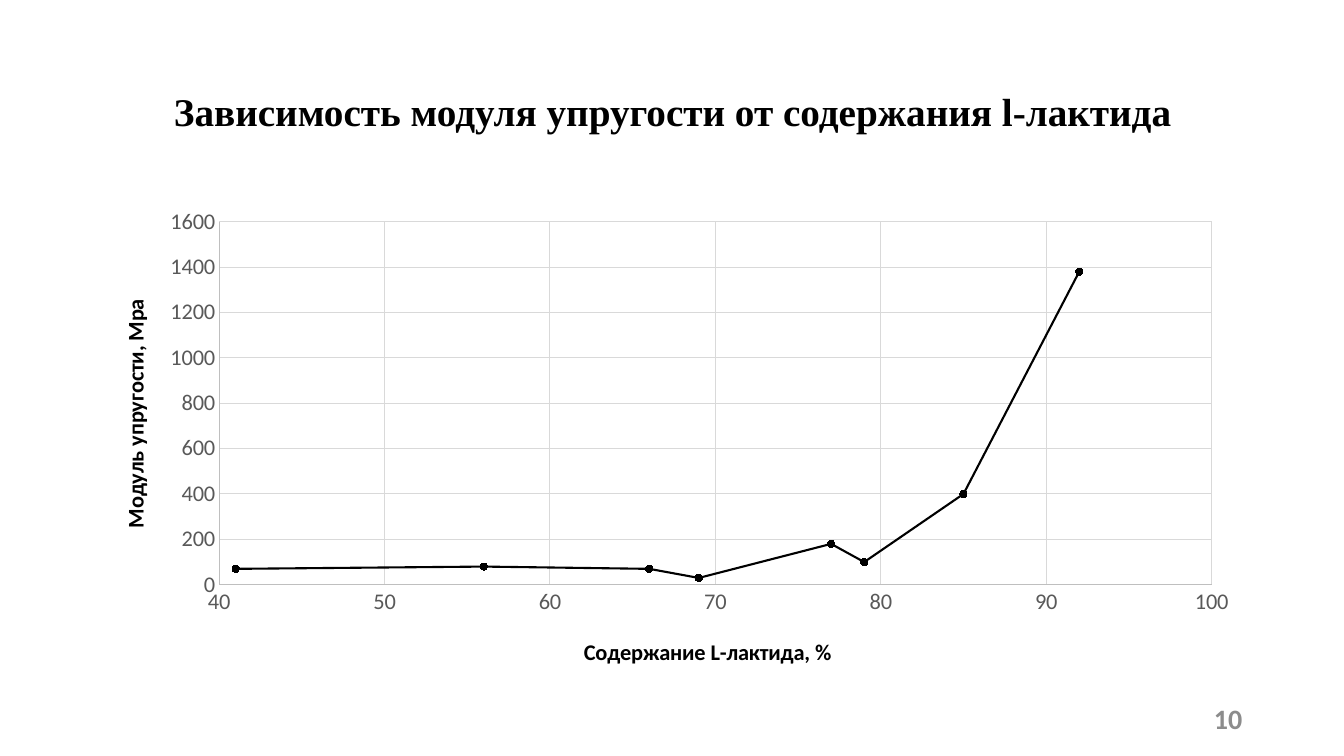
from pptx import Presentation
from pptx.chart.data import XyChartData
from pptx.dml.color import RGBColor
from pptx.enum.chart import XL_CHART_TYPE, XL_MARKER_STYLE, XL_TICK_LABEL_POSITION, XL_TICK_MARK
from pptx.enum.text import MSO_ANCHOR, PP_ALIGN
from pptx.oxml import parse_xml
from pptx.oxml.ns import nsdecls, qn
from pptx.util import Inches, Pt

BLACK, TICK_GRAY, AXIS_GRAY, GRID_GRAY = "000000", "595959", "BFBFBF", "D9D9D9"
MEASUREMENTS = [(92, 1380), (85, 400), (79, 100), (77, 180),
                (69, 30), (66, 70), (56, 80), (41, 70)]


def color(hex_code):
    return RGBColor.from_string(hex_code)


def style_font(font, size, hex_code, bold=False, name="Calibri"):
    font.name, font.size, font.bold = name, Pt(size), bold
    font.color.rgb = color(hex_code)


def style_line(line, hex_code, width):
    line.color.rgb = color(hex_code)
    line.width = Pt(width)


def add_line_of_text(slide, box, text, align, **font_style):
    frame = slide.shapes.add_textbox(*map(Inches, box)).text_frame
    frame.word_wrap = True
    frame.vertical_anchor = MSO_ANCHOR.MIDDLE
    paragraph = frame.paragraphs[0]
    paragraph.alignment = align
    paragraph.line_spacing = 0.9
    run = paragraph.add_run()
    run.text = text
    style_font(run.font, bold=True, **font_style)


def set_layout(parent, index, target=None, **fractions):
    """Place a chart part at fractions of the chart's width and height."""
    for old in parent.findall(qn("c:layout")):
        parent.remove(old)
    inner = f'<c:layoutTarget val="{target}"/>' if target else ""
    inner += "".join(f'<c:{key}Mode val="edge"/>' for key in "xy")
    inner += "".join(f'<c:{key} val="{value}"/>' for key, value in fractions.items())
    parent.insert(index, parse_xml(
        f'<c:layout {nsdecls("c")}><c:manualLayout>{inner}</c:manualLayout></c:layout>'))


def style_axis(axis, title, low, high, step, title_x, title_y):
    axis.minimum_scale, axis.maximum_scale, axis.major_unit = low, high, step
    axis.major_tick_mark = axis.minor_tick_mark = XL_TICK_MARK.NONE
    axis.tick_label_position = XL_TICK_LABEL_POSITION.NEXT_TO_AXIS
    axis.has_major_gridlines = True
    style_line(axis.major_gridlines.format.line, GRID_GRAY, 0.75)
    style_line(axis.format.line, AXIS_GRAY, 0.75)
    style_font(axis.tick_labels.font, 16, TICK_GRAY)
    axis.tick_labels.number_format = "General"
    axis.tick_labels.number_format_is_linked = False
    run = axis.axis_title.text_frame.paragraphs[0].add_run()
    run.text = title
    style_font(run.font, 16, BLACK, bold=True)
    set_layout(axis.axis_title._element, 1, x=title_x, y=title_y)


def add_modulus_chart(slide, box):
    chart_data = XyChartData()
    modulus = chart_data.add_series("Модуль упругости")
    for content, value in MEASUREMENTS:
        modulus.add_data_point(content, value)
    chart = slide.shapes.add_chart(
        XL_CHART_TYPE.XY_SCATTER_SMOOTH, *map(Inches, box), chart_data).chart
    chart.has_title = chart.has_legend = False
    style_font(chart.font, 16, BLACK)
    chart.plots[0].vary_by_categories = False

    curve = chart.plots[0].series[0]
    curve.smooth = True
    style_line(curve.format.line, BLACK, 1.5)
    curve.marker.style, curve.marker.size = XL_MARKER_STYLE.CIRCLE, 5
    curve.marker.format.fill.solid()
    curve.marker.format.fill.fore_color.rgb = color(BLACK)
    style_line(curve.marker.format.line, BLACK, 0.75)

    style_axis(chart.category_axis, "Содержание L-лактида, %", 40, 100, 10, 0.42, 0.9)
    style_axis(chart.value_axis, "Модуль упругости, Мра", 0, 1600, 200, 0.02, 0.2)
    plot_area = chart._chartSpace.find(qn("c:chart")).find(qn("c:plotArea"))
    set_layout(plot_area, 0, "inner", x=0.109, y=0.048, w=0.856, h=0.752)


def main():
    deck = Presentation()
    deck.slide_width, deck.slide_height = Inches(13.33), Inches(7.5)
    slide = deck.slides.add_slide(deck.slide_layouts[6])
    add_line_of_text(slide, (0.92, 0.4, 11.5, 1.45),
                     "Зависимость модуля упругости от содержания l-лактида",
                     PP_ALIGN.CENTER, size=28, hex_code=BLACK, name="Times New Roman")
    add_modulus_chart(slide, (0.92, 1.97, 11.5, 4.79))
    add_line_of_text(slide, (9.42, 6.95, 3, 0.4), "10",
                     PP_ALIGN.RIGHT, size=20, hex_code="8C8C8C")
    deck.save("out.pptx")


if __name__ == "__main__":
    main()
